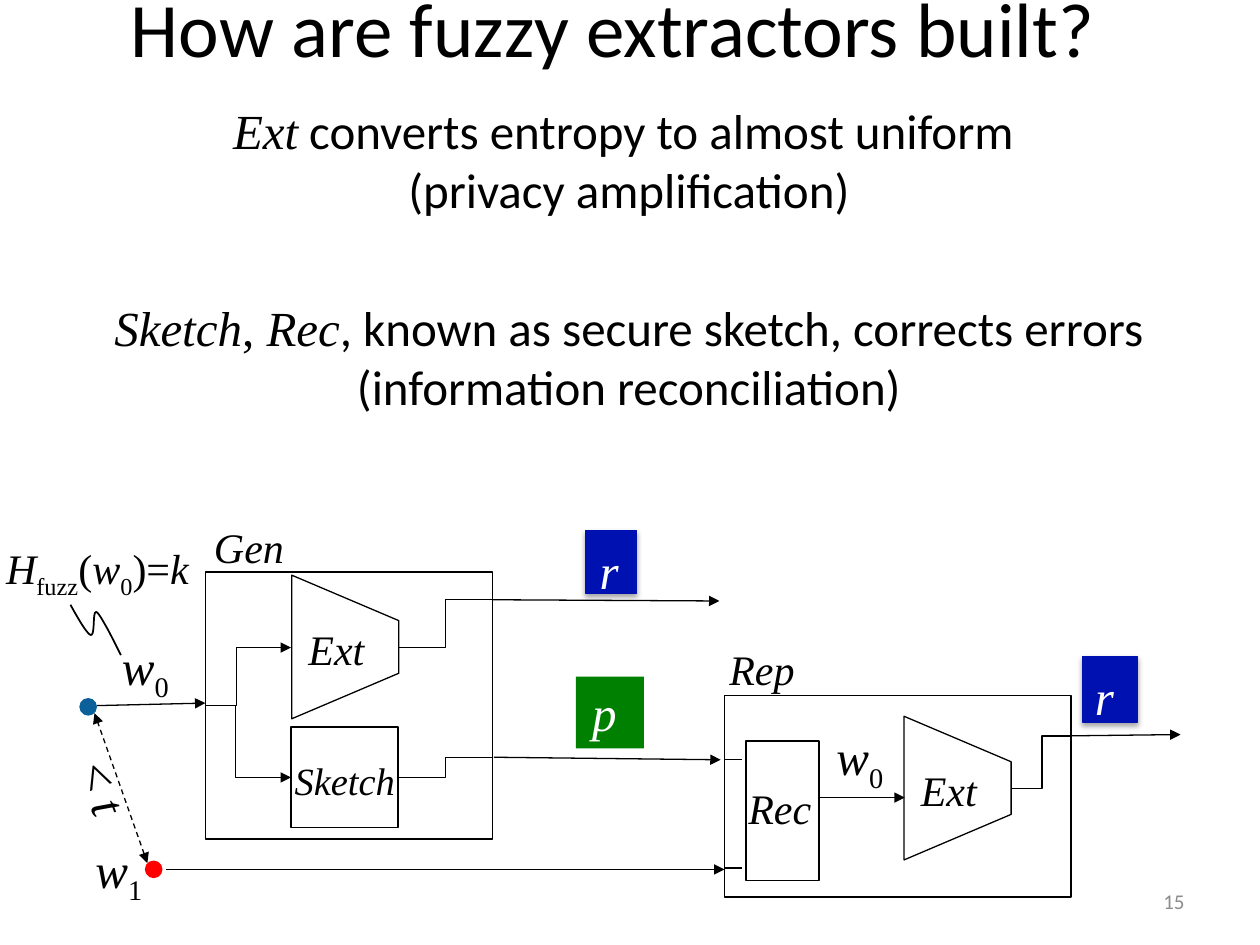
from dataclasses import dataclass

from lxml import etree
from pptx import Presentation
from pptx.dml.color import RGBColor
from pptx.enum.dml import MSO_LINE
from pptx.enum.shapes import MSO_CONNECTOR, MSO_SHAPE
from pptx.enum.text import MSO_ANCHOR, MSO_AUTO_SIZE, PP_ALIGN
from pptx.oxml.ns import qn
from pptx.util import Inches, Pt

RECTANGLE, OVAL, TRAPEZOID = MSO_SHAPE.RECTANGLE, MSO_SHAPE.OVAL, MSO_SHAPE.TRAPEZOID
STRAIGHT, ELBOW = MSO_CONNECTOR.STRAIGHT, MSO_CONNECTOR.ELBOW
CENTER, RIGHT = PP_ALIGN.CENTER, PP_ALIGN.RIGHT
MIDDLE, DASH = MSO_ANCHOR.MIDDLE, MSO_LINE.DASH
FIT_SHAPE, NO_FIT = MSO_AUTO_SIZE.SHAPE_TO_FIT_TEXT, MSO_AUTO_SIZE.NONE

COLORS = {"ink": "000000", "white": "FFFFFF", "key": "0011B2", "public": "008000",
          "first": "0B609A", "second": "FF0000", "number": "8C8C8C"}
SANS, SERIF = "Calibri", "Times New Roman"
SIDE_LEFT, SIDE_RIGHT = 1, 3


@dataclass
class Span:
    text: str
    italic: bool = True
    subscript: bool = False
    font: str = SERIF


@dataclass
class Label:
    place: tuple[float, float, float, float]
    spans: list[Span]
    size: int = 28
    color: str = "ink"
    rotation: float = 0


@dataclass
class Wire:
    start: tuple[float, float]
    end: tuple[float, float]
    tail: bool = True
    head: bool = False
    dashed: bool = False
    bend: float | None = None  # share of the width before an elbow turns
    start_at: tuple | None = None  # rectangle and side
    end_at: tuple | None = None


def rgb(name: str) -> RGBColor:
    return RGBColor.from_string(COLORS[name])


def add_spans(para, spans: list[Span], size: int, color: str = "ink") -> None:
    for span in spans:
        run = para.add_run()
        run.text = span.text
        run.font.name, run.font.size = span.font, Pt(size)
        run.font.italic = span.italic
        run.font.color.rgb = rgb(color)
        if span.subscript:
            run.font._element.set("baseline", "-25000")


def move(item, left: float, top: float, width: float, height: float) -> None:
    item.left, item.top = Inches(left), Inches(top)
    item.width, item.height = Inches(width), Inches(height)


def add_box(slide, place: tuple, kind=RECTANGLE, fill: str | None = None,
            line: str | None = "ink"):
    box = slide.shapes.add_shape(kind, *map(Inches, place))
    box.shadow.inherit = False
    if fill:
        box.fill.solid()
        box.fill.fore_color.rgb = rgb(fill)
    else:
        box.fill.background()
    if line:
        box.line.color.rgb = rgb(line)
        box.line.width = Pt(0.75)
    else:
        box.line.fill.background()
    return box


def add_extractor(slide, left: float, top: float) -> None:
    box = add_box(slide, (left, top, 1.14, 0.85), TRAPEZOID)
    box.adjustments[0] = 0.425
    box.rotation = 90
    add_label(slide, Label((left + 0.18, top + 0.19, 0.76, 0.5), [Span("Ext")], 24))


def add_key(slide, place: tuple, label_left: float) -> None:
    box = add_box(slide, place, fill="key", line="key")
    effects = box._element.spPr.find(qn("a:effectLst"))
    shadow = etree.SubElement(effects, qn("a:outerShdw"), blurRad=str(Pt(3.1)),
                              dist=str(Pt(1.8)), dir="5400000", rotWithShape="0")
    shade = etree.SubElement(shadow, qn("a:srgbClr"), val=COLORS["ink"])
    etree.SubElement(shade, qn("a:alpha"), val="35000")
    add_label(slide, Label((label_left, place[1] + 0.03, 0.49, 0.57), [Span("r")],
                           color="white"))


def add_label(slide, label: Label) -> None:
    box = slide.shapes.add_textbox(*map(Inches, label.place))
    box.rotation = label.rotation
    box.text_frame.word_wrap = False
    box.text_frame.auto_size = FIT_SHAPE
    add_spans(box.text_frame.paragraphs[0], label.spans, label.size, label.color)


def add_wire(slide, wire: Wire) -> None:
    kind = STRAIGHT if wire.bend is None else ELBOW
    link = slide.shapes.add_connector(kind, *map(Inches, wire.start + wire.end))
    if wire.start_at:
        link.begin_connect(*wire.start_at)
    if wire.end_at:
        link.end_connect(*wire.end_at)
    link.line.color.rgb = rgb("ink")
    link.line.width = Pt(0.75)
    if wire.dashed:
        link.line.dash_style = DASH
    properties = link._element.spPr
    outline = properties.find(qn("a:ln"))
    for shown, tag in ((wire.head, "a:headEnd"), (wire.tail, "a:tailEnd")):
        if shown:
            etree.SubElement(outline, qn(tag), type="triangle")
    if wire.bend is not None:
        guides = properties.find(qn("a:prstGeom")).get_or_add_avLst()
        etree.SubElement(guides, qn("a:gd"), name="adj1",
                         fmla=f"val {round(wire.bend * 100000)}")
    etree.SubElement(properties, qn("a:effectLst"))


def add_squiggle(slide, start: tuple, curves: list[tuple], steps: int = 12) -> None:
    """Draw a chain of cubic curves as fine segments."""
    points, origin = [], start
    for knots in curves:
        corners = (origin, *knots)
        for step in range(1, steps + 1):
            t = step / steps
            weights = ((1 - t) ** 3, 3 * t * (1 - t) ** 2, 3 * t * t * (1 - t), t ** 3)
            points.append(tuple(Inches(sum(w * c[axis] for w, c in zip(weights, corners)))
                                for axis in (0, 1)))
        origin = knots[-1]
    builder = slide.shapes.build_freeform(*map(Inches, start))
    builder.add_line_segments(points, close=False)
    curve = builder.convert_to_shape()
    curve.shadow.inherit = False
    curve.fill.background()
    curve.line.color.rgb = rgb("ink")
    curve.line.width = Pt(1)


def add_statement(para, first: list[Span], second: str) -> None:
    para.alignment = CENTER
    properties = para._p.get_or_add_pPr()
    properties.set("marL", "0")
    properties.set("indent", "0")
    etree.SubElement(properties, qn("a:buNone"))
    add_spans(para, first, 28)
    para.add_line_break()
    add_spans(para, [Span(second, False, font=SANS)], 28)


def main() -> None:
    deck = Presentation()
    deck.slide_width, deck.slide_height = Inches(10), Inches(7.5)
    slide = deck.slides.add_slide(deck.slide_layouts[1])

    # Title and statements
    title, body = slide.placeholders
    move(title, -0.54, -0.26, 10.81, 0.94)
    add_spans(title.text_frame.paragraphs[0],
              [Span("How are fuzzy extractors built?", False, font=SANS)], 44)
    move(body, 0.14, 0.75, 9.7, 2.8)
    body.text_frame.auto_size = NO_FIT
    add_statement(body.text_frame.paragraphs[0],
                  [Span("Ext"), Span(" converts entropy to almost uniform ", False, font=SANS)],
                  "(privacy amplification)")
    para = body.text_frame.add_paragraph()
    para.space_before = Pt(45)
    add_statement(para, [Span("Sketch"), Span(", ", False), Span("Rec"),
                         Span(", known as secure sketch, corrects errors", False, font=SANS)],
                  "(information reconciliation)")

    # Blocks
    gen = add_box(slide, (1.63, 4.54, 2.28, 2.12))
    add_box(slide, (5.75, 5.52, 2.75, 1.6))
    sketch = add_box(slide, (2.31, 5.77, 0.85, 0.8))
    add_box(slide, (5.92, 5.88, 0.58, 1.11))
    add_extractor(slide, 2.17, 4.71)
    add_extractor(slide, 7.03, 5.83)
    add_key(slide, (4.65, 4.21, 0.4, 0.5), 4.66)
    add_key(slide, (8.59, 5.21, 0.44, 0.52), 8.59)
    add_box(slide, (4.57, 5.37, 0.54, 0.57), fill="public", line=None)
    add_box(slide, (0.63, 5.54, 0.14, 0.14), OVAL, "first", None)
    add_box(slide, (1.15, 6.83, 0.14, 0.14), OVAL, "second", None)

    # Wires
    for wire in (
        Wire((0.77, 5.6), (1.63, 5.58)),
        Wire((3.91, 4.76), (5.71, 4.77)),
        Wire((3.92, 6.01), (5.72, 6.03)),
        Wire((1.32, 6.9), (5.75, 6.9)),
        Wire((6.49, 6.33), (7.18, 6.33)),
        Wire((8.51, 5.84), (9.37, 5.83)),
        Wire((5.75, 6.89), (5.89, 6.89), tail=False),
        Wire((5.75, 6.03), (5.89, 6.03), tail=False),
        Wire((1.17, 6.85), (0.75, 5.66), head=True, dashed=True),
        Wire((1.63, 5.6), (2.31, 5.14), bend=0.36, start_at=(gen, SIDE_LEFT)),
        Wire((1.63, 5.6), (2.31, 6.17), bend=0.35, start_at=(gen, SIDE_LEFT),
             end_at=(sketch, SIDE_LEFT)),
        Wire((3.91, 4.76), (3.16, 5.14), tail=False, bend=0.5),
        Wire((3.91, 6.01), (3.16, 6.17), tail=False, bend=0.5, end_at=(sketch, SIDE_RIGHT)),
        Wire((8.51, 5.84), (8.03, 6.26), tail=False, bend=0.5),
    ):
        add_wire(slide, wire)
    add_squiggle(slide, (0.56, 4.8), [((0.62, 4.91), (0.69, 5.03), (0.72, 5.04)),
                                      ((0.76, 5.05), (0.73, 4.83), (0.77, 4.86)),
                                      ((0.81, 4.89), (0.96, 5.2), (0.96, 5.2))])

    # Labels
    zero = Span("0", False, True)
    for label in (
        Label((1.6, 4.09, 0.87, 0.5), [Span("Gen")], 24),
        Label((5.69, 5.06, 0.84, 0.5), [Span("Rep")], 24),
        Label((2.24, 5.96, 1.11, 0.47), [Span("Sketch")], 22),
        Label((5.84, 6.16, 0.82, 0.65), [Span("Rec")], 24),
        Label((4.6, 5.37, 0.49, 0.57), [Span("p")], color="white"),
        Label((0.87, 5, 0.64, 0.57), [Span("w"), zero]),
        Label((6.54, 5.72, 0.64, 0.57), [Span("w"), zero]),
        Label((0.66, 6.61, 0.64, 0.57), [Span("w"), Span("1", False, True)]),
        Label((0.51, 5.98, 0.65, 0.57), [Span("< ", False), Span("t")], rotation=69.7),
        Label((-0.05, 4.26, 1.79, 0.5),
              [Span("H"), Span("fuzz", False, True), Span("(", False), Span("w"), zero,
               Span(")=", False), Span("k")], 24),
    ):
        add_label(slide, label)

    # Slide number
    number = slide.shapes.add_textbox(*map(Inches, (7.17, 6.95, 2.33, 0.4)))
    number.text_frame.word_wrap = True
    number.text_frame.vertical_anchor = MIDDLE
    para = number.text_frame.paragraphs[0]
    para.alignment = RIGHT
    add_spans(para, [Span("15", False, font=SANS)], 12, "number")

    deck.save("out.pptx")


if __name__ == "__main__":
    main()
